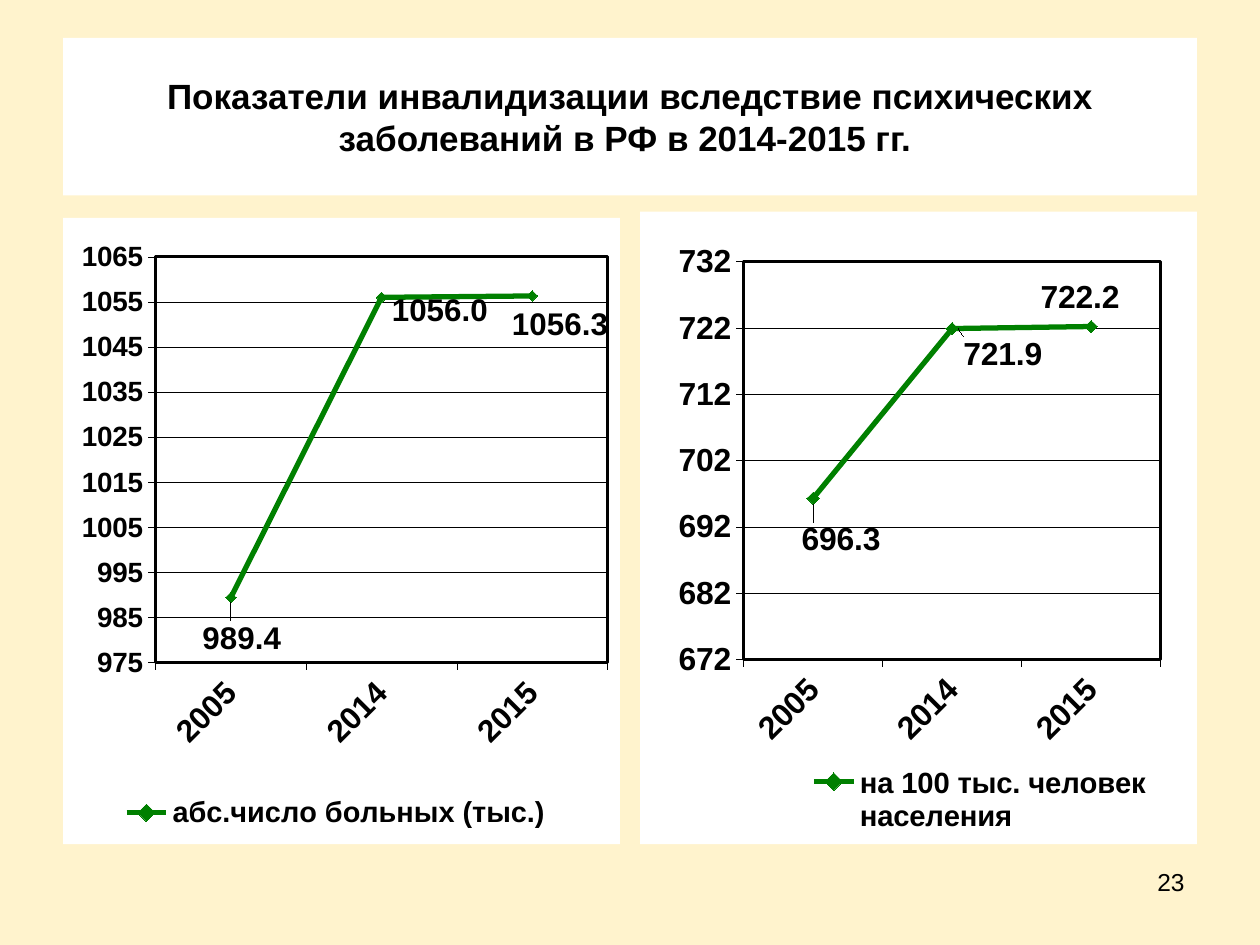
import pptx
import pptx.chart.data
import pptx.dml.color
import pptx.enum.chart
import pptx.enum.text
import pptx.oxml
import pptx.oxml.ns
import pptx.util

Inches, Pt = pptx.util.Inches, pptx.util.Pt
RGBColor = pptx.dml.color.RGBColor
Align, Anchor = pptx.enum.text.PP_ALIGN, pptx.enum.text.MSO_ANCHOR
Place = pptx.enum.chart.XL_LABEL_POSITION
Tick = pptx.enum.chart.XL_TICK_MARK

CREAM = RGBColor(0xFF, 0xF3, 0xCD)
WHITE = RGBColor(0xFF, 0xFF, 0xFF)
BLACK = RGBColor(0, 0, 0)
GREEN = RGBColor(0, 0x80, 0)

# Content
TITLE = "Показатели инвалидизации вследствие психических заболеваний в РФ в 2014-2015 гг. "
PAGE = "23"
YEARS = ["2005", "2014", "2015"]
# Label entries: position and x, y shift as shares of the chart size
INDICATORS = [
    {
        "name": "абс.число больных (тыс.)", "values": [989.4, 1056.0, 1056.3],
        "at": (0.5, 1.73, 4.42, 4.97), "scale": (975, 1065),
        "plot": (0.166, 0.062, 0.812, 0.648), "legend": (0.09, 0.92, 0.8, 0.06),
        "size": 17.9, "scale_size": 15.9, "legend_size": 16.5, "marker": 6,
        "labels": [(Place.BELOW, 0.02, 0.02), (Place.RIGHT, 0, 0.02), (Place.BELOW, 0.05, 0)],
    },
    {
        "name": "на 100 тыс. человек населения", "values": [696.3, 721.9, 722.2],
        "at": (5.08, 1.68, 4.42, 5.02), "scale": (672, 732),
        "plot": (0.186, 0.079, 0.749, 0.629), "legend": (0.26, 0.87, 0.7, 0.12),
        "size": 18.2, "scale_size": 18.2, "legend_size": 16.7, "marker": 7,
        "labels": [(Place.BELOW, 0.05, 0.02), (Place.RIGHT, 0, 0.04), (Place.ABOVE, -0.02, 0)],
    },
]


def set_font(font, size, bold=True):
    formats = {"name": "Arial", "size": Pt(size), "bold": bold}
    for key, value in formats.items():
        setattr(font, key, value)
    font.color.rgb = BLACK


def set_line(line, color, width):
    line.color.rgb = color
    line.width = Pt(width)


def chart_xml(tag, body):
    return pptx.oxml.parse_xml(f"<{tag} {pptx.oxml.ns.nsdecls('c', 'a')}>{body}</{tag}>")


def manual_layout(box, inner=False):
    """Layout from x, y (a shift) or from x, y, w, h (a fixed box)."""
    body = '<c:layoutTarget val="inner"/>' if inner else ""
    if len(box) == 4:
        body += '<c:xMode val="edge"/><c:yMode val="edge"/>'
    body += "".join(f'<c:{side} val="{value}"/>' for side, value in zip("xywh", box))
    return chart_xml("c:layout", f"<c:manualLayout>{body}</c:manualLayout>")


def replace_layout(parent, layout, index):
    for old in parent.findall(pptx.oxml.ns.qn("c:layout")):
        parent.remove(old)
    parent.insert(index, layout)


def panel(color_fill):
    fill = f'<a:solidFill><a:srgbClr val="{color_fill}"/></a:solidFill>'
    return fill


def add_indicator(slide, item):
    data = pptx.chart.data.CategoryChartData(number_format="0.0")
    data.categories = YEARS
    data.add_series(item["name"], item["values"])
    chart = slide.shapes.add_chart(
        pptx.enum.chart.XL_CHART_TYPE.LINE_MARKERS, *map(Inches, item["at"]), data).chart
    chart.has_title = False
    set_font(chart.font, item["size"])

    # Axes
    value_axis, year_axis = chart.value_axis, chart.category_axis
    low, high = item["scale"]
    scale = {"minimum_scale": low, "maximum_scale": high, "major_unit": 10,
             "has_major_gridlines": True}
    for key, value in scale.items():
        setattr(value_axis, key, value)
    value_axis.tick_labels.number_format = "0"
    value_axis.tick_labels.number_format_is_linked = False
    set_line(value_axis.major_gridlines.format.line, BLACK, 0.25)
    for axis, size in ((value_axis, item["scale_size"]), (year_axis, item["size"])):
        axis.major_tick_mark = Tick.OUTSIDE
        set_line(axis.format.line, BLACK, 0.25)
        set_font(axis.tick_labels.font, size)
    year_text = year_axis.tick_labels.font._element.getparent().getparent().getparent()
    year_text.find(pptx.oxml.ns.qn("a:bodyPr")).set("rot", "-2700000")

    # Line, markers and point labels
    series = chart.plots[0].series[0]
    chart.plots[0].vary_by_categories = False
    series.smooth = False
    set_line(series.format.line, GREEN, 3)
    series.marker.style = pptx.enum.chart.XL_MARKER_STYLE.DIAMOND
    series.marker.size = item["marker"]
    series.marker.format.fill.solid()
    series.marker.format.fill.fore_color.rgb = GREEN
    series.marker.format.line.color.rgb = GREEN
    for index, (position, dx, dy) in enumerate(item["labels"]):
        label = series.points[index].data_label
        set_font(label.font, item["size"])
        label.position = position
    label_nodes = series._element.iter(pptx.oxml.ns.qn("c:dLbl"))
    for node, (position, dx, dy) in zip(label_nodes, item["labels"]):
        replace_layout(node, manual_layout((dx, dy)), 1)

    # Legend
    chart.has_legend = True
    chart.legend.position = pptx.enum.chart.XL_LEGEND_POSITION.BOTTOM
    chart.legend.include_in_layout = False
    set_font(chart.legend.font, item["legend_size"])
    replace_layout(chart.legend._element, manual_layout(item["legend"]), 1)

    # Plot area place and frame, white chart background
    space = chart._chartSpace
    plot_area = space.chart.plotArea
    replace_layout(plot_area, manual_layout(item["plot"], inner=True), 0)
    plot_area.append(chart_xml(
        "c:spPr", f'<a:noFill/><a:ln w="19050">{panel(BLACK)}</a:ln>'))
    space.chart.addnext(chart_xml("c:spPr", f"{panel(WHITE)}<a:ln><a:noFill/></a:ln>"))


def main():
    deck = pptx.Presentation()
    deck.slide_width, deck.slide_height = Inches(10), Inches(7.5)
    slide = deck.slides.add_slide(deck.slide_layouts[5])
    slide.background.fill.solid()
    slide.background.fill.fore_color.rgb = CREAM

    # Title
    title = slide.shapes.title
    title.left, title.top, title.width, title.height = map(Inches, (0.5, 0.3, 9, 1.25))
    title.fill.solid()
    title.fill.fore_color.rgb = WHITE
    title.text_frame.text = TITLE
    title.text_frame.vertical_anchor = Anchor.MIDDLE
    heading = title.text_frame.paragraphs[0]
    heading.alignment = Align.CENTER
    set_font(heading.runs[0].font, 20)

    # Page number
    page = slide.shapes.add_textbox(*map(Inches, (7.17, 6.83, 2.33, 0.52))).text_frame
    page.word_wrap = True
    page.text = PAGE
    page.paragraphs[0].alignment = Align.RIGHT
    set_font(page.paragraphs[0].runs[0].font, 14, bold=False)

    for item in INDICATORS:
        add_indicator(slide, item)
    deck.save("out.pptx")


if __name__ == "__main__":
    main()
